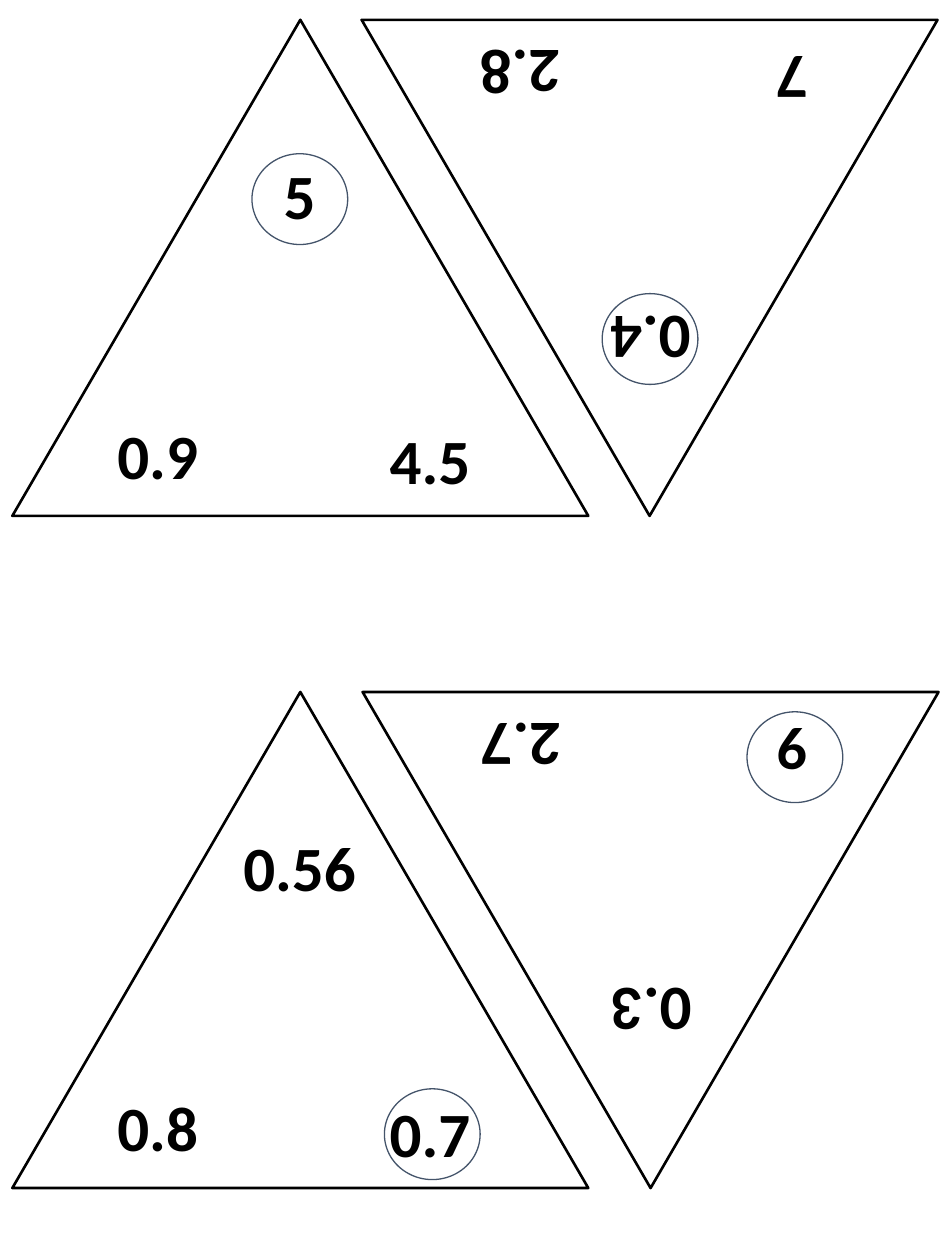
from pptx import Presentation
from pptx import util as u
from pptx.dml import color
from pptx.enum import shapes, text

BLACK, WHITE, SLATE = "000000", "FFFFFF", "44546A"
FONT = "Calibri"
TRIANGLE_WIDTH, TRIANGLE_HEIGHT = 11.61, 10.0
CIRCLE_SIZE = (1.93, 1.83)

# left, top, upside down, numbers at the apex, first and second base corner
TRIANGLES = [
    (0.25, 0.40, False, ("5", "0.9", "4.5")),
    (7.29, 0.40, True, ("0.4", "7", "2.8")),
    (0.25, 13.95, False, ("0.56", "0.8", "0.7")),
    (7.31, 13.95, True, ("0.3", "9", "2.7")),
]
CORNERS = [(4.19, 2.63, 3.20, 1.80), (1.24, 7.87, 3.38, 1.80), (6.53, 7.98, 3.78, 1.80)]
CIRCLES = [(12.14, 5.92), (5.08, 3.10), (7.75, 21.95), (15.06, 14.35)]


def rgb(value):
    return color.RGBColor.from_string(value)


def lengths(*values):
    return [u.Cm(value) for value in values]


def add_outline(parent, kind, box, line, width, fill=None):
    shape = parent.add_shape(kind, *lengths(*box))
    shape.shadow.inherit = False
    if fill:
        shape.fill.solid()
        shape.fill.fore_color.rgb = rgb(fill)
    else:
        shape.fill.background()
    shape.line.color.rgb = rgb(line)
    shape.line.width = u.Pt(width)
    return shape


def add_number(parent, number, box):
    shape = parent.add_textbox(*lengths(*box))
    frame = shape.text_frame
    frame.text = number
    frame.word_wrap = True
    frame.auto_size = text.MSO_AUTO_SIZE.SHAPE_TO_FIT_TEXT
    paragraph = frame.paragraphs[0]
    paragraph.alignment = text.PP_ALIGN.CENTER
    font = paragraph.runs[0].font
    font.name, font.size, font.bold = FONT, u.Pt(36), True
    font.color.rgb = rgb(BLACK)
    return shape


def add_number_triangle(slide, left, top, upside_down, numbers):
    group = slide.shapes.add_group_shape().shapes
    rotation = 180 if upside_down else 0
    triangle = add_outline(group, shapes.MSO_SHAPE.ISOSCELES_TRIANGLE,
                           (left, top, TRIANGLE_WIDTH, TRIANGLE_HEIGHT), BLACK, 1.5, WHITE)
    triangle.rotation = rotation
    for number, (x, y, width, height) in zip(numbers, CORNERS):
        if upside_down:
            x, y = TRIANGLE_WIDTH - x - width, TRIANGLE_HEIGHT - y - height
        label = add_number(group, number, (left + x, top + y, width, height))
        label.rotation = rotation


def main():
    presentation = Presentation()
    presentation.slide_width, presentation.slide_height = lengths(19.05, 25.4)
    slide = presentation.slides.add_slide(presentation.slide_layouts[6])
    for triangle in TRIANGLES:
        add_number_triangle(slide, *triangle)
    for corner in CIRCLES:
        add_outline(slide.shapes, shapes.MSO_SHAPE.OVAL, corner + CIRCLE_SIZE, SLATE, 0.75)
    presentation.save("out.pptx")


if __name__ == "__main__":
    main()
